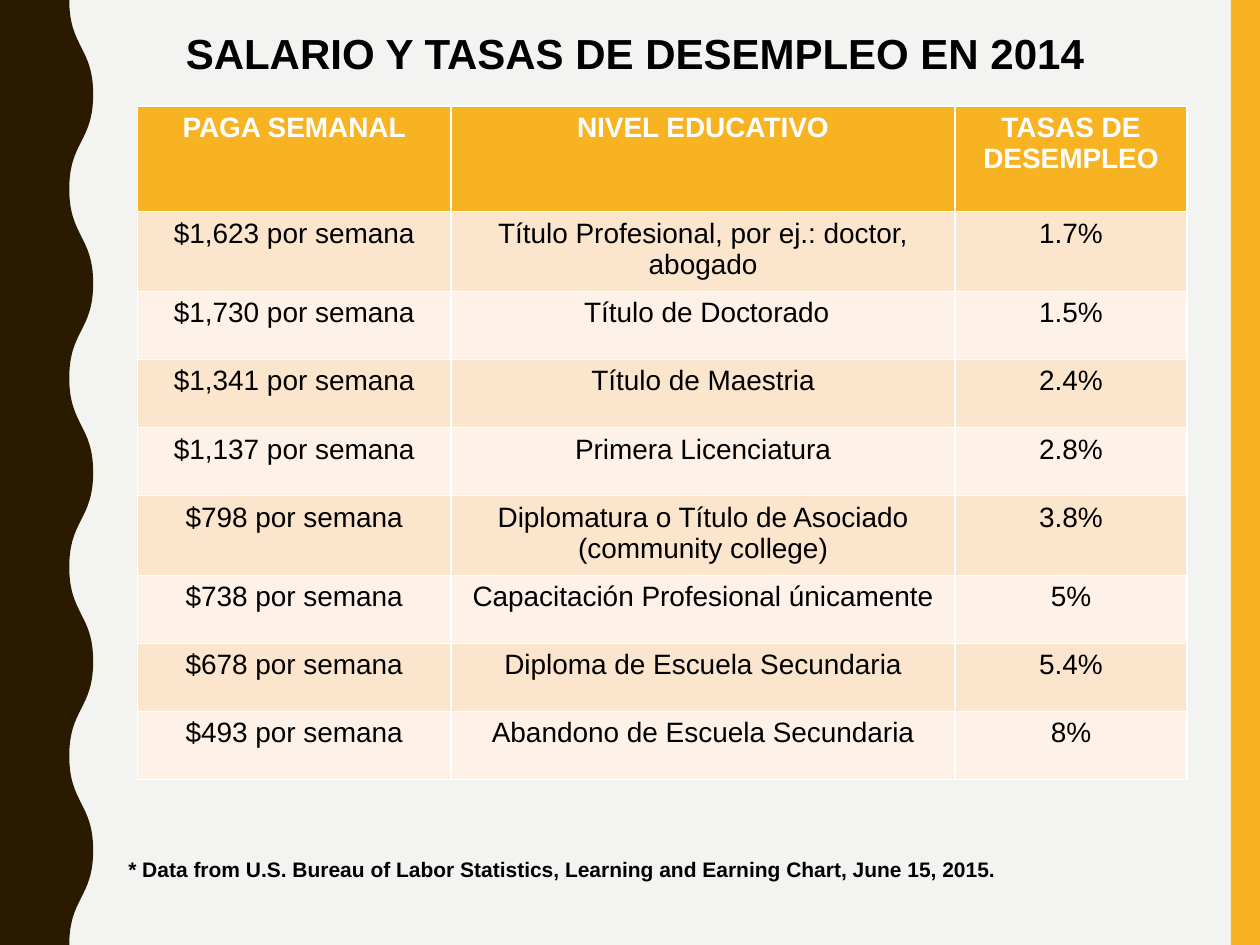
from lxml import etree
from pptx import Presentation
from pptx.dml.color import RGBColor
from pptx.enum import shapes, text
from pptx.oxml import ns
from pptx.util import Inches, Pt

BACKGROUND = RGBColor(0xF3, 0xF3, 0xF2)
GOLD = RGBColor(0xF8, 0xB3, 0x23)
BROWN = RGBColor(0x2A, 0x1A, 0x00)
PEACH = RGBColor(0xFC, 0xE5, 0xCD)
CREAM = RGBColor(0xFE, 0xF2, 0xE8)
BLACK = RGBColor(0, 0, 0)
WHITE = RGBColor(0xFF, 0xFF, 0xFF)

WIDTH, HEIGHT = 10, 7.5
COLUMN_WIDTHS = (2.49, 4, 1.84)
HEADER_HEIGHT, ROW_HEIGHT = 0.84, 0.54
HEADERS = ("PAGA SEMANAL", "NIVEL EDUCATIVO", "TASAS DE DESEMPLEO")
RECORDS = (
    ("$1,623", "Título Profesional, por ej.: doctor, abogado", "1.7%"),
    ("$1,730", " Título de Doctorado", "1.5%"),
    ("$1,341", "Título de Maestria", "2.4%"),
    ("$1,137", "Primera Licenciatura", "2.8%"),
    ("$798", "Diplomatura o Título de Asociado (community college)", "3.8%"),
    ("$738", "Capacitación Profesional únicamente", "5%"),
    ("$678", "Diploma de Escuela Secundaria", "5.4%"),
    ("$493", "Abandono de Escuela Secundaria", "8%"),
)


def write(frame, words, color=BLACK, align=text.PP_ALIGN.CENTER, **font):
    para = frame.paragraphs[0]
    para.alignment = align
    span = para.add_run()
    span.text = words
    for name, value in {"name": "Arial", **font}.items():
        setattr(span.font, name, value)
    span.font.color.rgb = color


def paint(shape, color):
    shape.shadow.inherit = False
    shape.fill.solid()
    shape.fill.fore_color.rgb = color
    shape.line.fill.background()


def add_wave(page, inner=0.55, outer=0.74, swings=10):
    """Left band whose edge swings between inner and outer."""
    nodes = [(Inches(outer if index % 2 else inner),
              Inches(HEIGHT * index / swings)) for index in range(swings + 1)]
    builder = page.shapes.build_freeform(*nodes[0], scale=1.0)
    builder.add_line_segments(
        [*nodes[1:], (0, Inches(HEIGHT)), (0, 0)], close=True)
    wave = builder.convert_to_shape()
    paint(wave, BROWN)

    # Bend the swings: each leaves and arrives vertically
    lines = list(wave._element.iter(ns.qn("a:lnTo")))
    for line, (x1, y1), (x2, y2) in zip(lines, nodes, nodes[1:]):
        middle = (y1 + y2) // 2
        curve = etree.Element(ns.qn("a:cubicBezTo"))
        for x, y in ((x1, middle), (x2, middle), (x2, y2)):
            etree.SubElement(curve, ns.qn("a:pt"), x=str(x), y=str(y))
        line.getparent().replace(line, curve)


def add_label(page, place, words, **style):
    box = page.shapes.add_textbox(*map(Inches, place))
    box.text_frame.word_wrap = True
    box.text_frame.auto_size = text.MSO_AUTO_SIZE.SHAPE_TO_FIT_TEXT
    write(box.text_frame, words, bold=True, **style)


def add_salary_table(page):
    rows = [HEADERS] + [
        (f"{pay} por semana", level, rate) for pay, level, rate in RECORDS]
    total_height = HEADER_HEIGHT + ROW_HEIGHT * len(RECORDS)
    # The default table style supplies the white rules
    table = page.shapes.add_table(
        len(rows), len(HEADERS), Inches(1.09), Inches(0.84),
        Inches(sum(COLUMN_WIDTHS)), Inches(total_height)).table
    for column, width in zip(table.columns, COLUMN_WIDTHS):
        column.width = Inches(width)
    for index, values in enumerate(rows):
        header = index == 0
        table.rows[index].height = Inches(
            HEADER_HEIGHT if header else ROW_HEIGHT)
        fill = GOLD if header else PEACH if index % 2 else CREAM
        for cell, words in zip(table.rows[index].cells, values):
            cell.fill.solid()
            cell.fill.fore_color.rgb = fill
            write(cell.text_frame, words, WHITE if header else BLACK,
                  size=Pt(16), bold=header)


def main():
    deck = Presentation()
    deck.slide_width, deck.slide_height = Inches(WIDTH), Inches(HEIGHT)
    page = deck.slides.add_slide(deck.slide_layouts[6])
    page.background.fill.solid()
    page.background.fill.fore_color.rgb = BACKGROUND

    # Side bands
    band = page.shapes.add_shape(
        shapes.MSO_SHAPE.RECTANGLE, Inches(9.77), 0,
        Inches(0.23), Inches(HEIGHT))
    paint(band, GOLD)
    add_wave(page)

    # Title, table and source note
    add_label(page, (0.08, 0.17, 9.92, 0.5),
              "SALARIO Y TASAS DE DESEMPLEO EN 2014", size=Pt(24))
    add_salary_table(page)
    add_label(page, (0.92, 6.75, 7.8, 0.3),
              "* Data from U.S. Bureau of Labor Statistics, "
              "Learning and Earning Chart, June 15, 2015.",
              size=Pt(12), align=text.PP_ALIGN.LEFT)
    deck.save("out.pptx")


if __name__ == "__main__":
    main()
